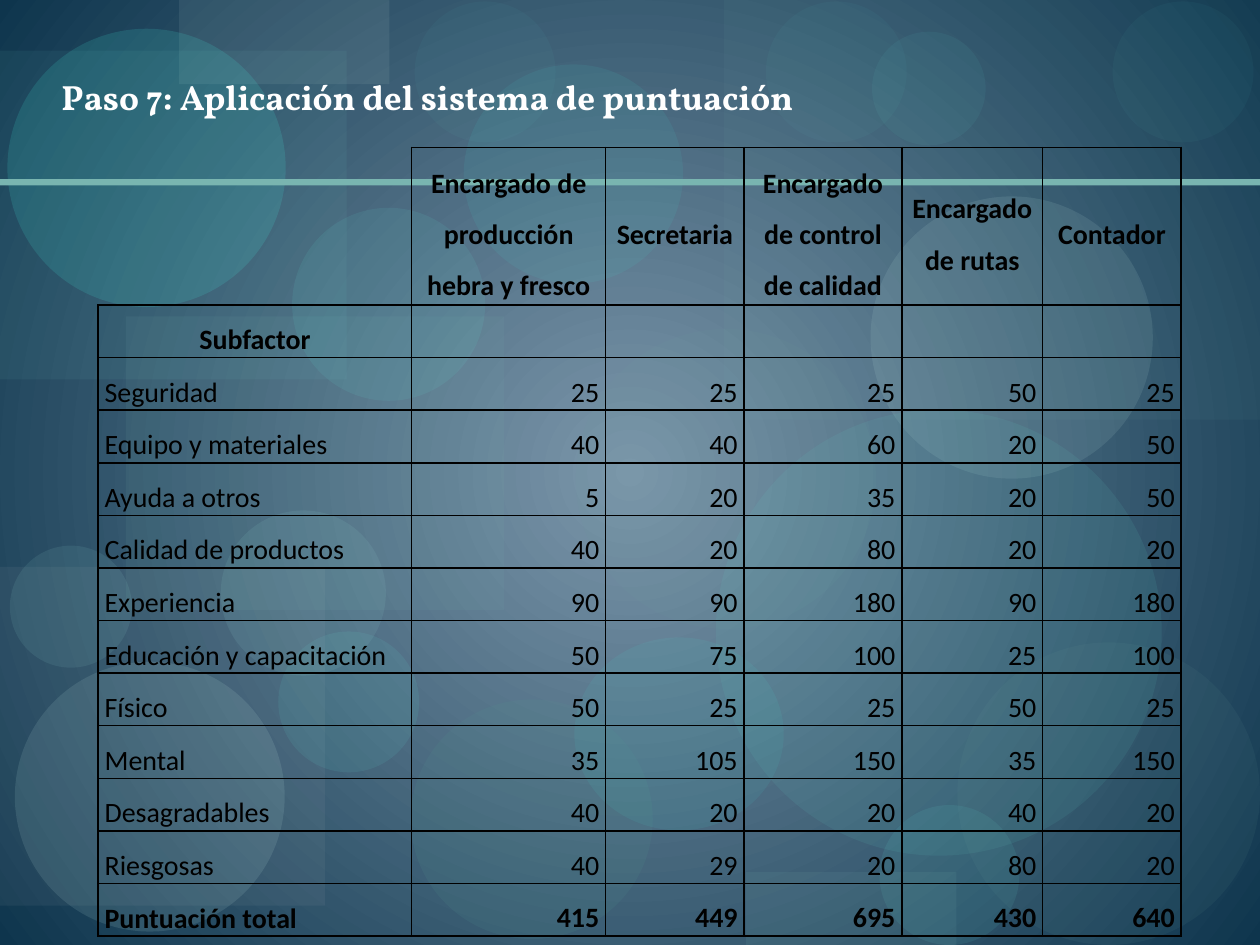
from lxml.etree import SubElement
from pptx import Presentation
from pptx.dml.color import RGBColor
from pptx.enum.shapes import MSO_SHAPE
from pptx.enum.text import MSO_ANCHOR, PP_ALIGN
from pptx.oxml.ns import qn
from pptx.util import Cm, Pt

HUES = {
    "core": "7B96AA", "edge": "0E354D", "bar": "79B5B0", "sea": "549791",
    "gray": "B2B7BA", "moss": "70A39E", "aqua": "65E8DC", "pale": "C1E8E4",
    "neon": "44EADC", "mint": "77D6CE", "mist": "BED7D4", "foam": "97DCD6",
    "teal": "61CDC4", "black": "000000", "white": "FFFFFF",
}
RECT, OVAL = MSO_SHAPE.RECTANGLE, MSO_SHAPE.OVAL

# kind, colour, opacity in percent, left, top, width, height (cm)
DECOR = [
    (RECT, "bar", 9, 2.54, 6.38, 7.62, 5.92),
    (OVAL, "sea", 13, 8.28, 14.1, 4.88, 4.83),
    (RECT, "bar", 6, 14.6, 0, 10.8, 8.46),
    (RECT, "gray", 8, 0, 11.43, 6.55, 6.83),
    (OVAL, "moss", 8, 11.61, 6.63, 6.05, 6.05),
    (OVAL, "aqua", 9, 17.73, 16.23, 2.82, 2.82),
    (OVAL, "pale", 11, 17.55, 3.96, 5.69, 5.69),
    (OVAL, "pale", 12, 0.3, 13.34, 5.44, 5.44),
    (OVAL, "aqua", 9, 5.61, 12.73, 2.84, 2.84),
    (OVAL, "neon", 8, 11.58, 12.85, 4.22, 3.89),
    (RECT, "mint", 7, 0, 1.02, 6.99, 6.63),
    (RECT, "mist", 10, 3.61, 0, 4.24, 1.7),
    (OVAL, "neon", 15, 0.15, 0.58, 5.61, 5.61),
    (OVAL, "foam", 10, 0.2, 11, 2.46, 2.46),
    (OVAL, "aqua", 9, 5.89, 4.19, 3.89, 3.89),
    (OVAL, "neon", 8, 9.35, 1.3, 4.42, 4.42),
    (OVAL, "teal", 10, 14.43, 8.26, 8.99, 8.99),
    (OVAL, "aqua", 4, 15.44, 0.03, 2.84, 2.84),
    (OVAL, "moss", 8, 19.3, 12.95, 6.1, 6.1),
    (OVAL, "foam", 10, 4.45, 10.29, 3.33, 3.33),
    (OVAL, "aqua", 6, 17.58, 0.64, 2.29, 2.29),
    (OVAL, "aqua", 4, 22.43, 0.03, 2.84, 2.84),
    (RECT, "bar", 10, 15.04, 17.58, 4.24, 1.47),
    (OVAL, "aqua", 4, 8.36, 0.03, 2.84, 2.84),
    (RECT, "bar", 100, 0, 3.61, 25.4, 0.13),
]

ROWS = [
    ("", "Encargado de producción hebra y fresco", "Secretaria",
     "Encargado de control de calidad", "Encargado de rutas", "Contador"),
    ("Subfactor", "", "", "", "", ""),
    ("Seguridad", 25, 25, 25, 50, 25),
    ("Equipo y materiales", 40, 40, 60, 20, 50),
    ("Ayuda a otros", 5, 20, 35, 20, 50),
    ("Calidad de productos", 40, 20, 80, 20, 20),
    ("Experiencia", 90, 90, 180, 90, 180),
    ("Educación y capacitación", 50, 75, 100, 25, 100),
    ("Físico", 50, 25, 25, 50, 25),
    ("Mental", 35, 105, 150, 35, 150),
    ("Desagradables", 40, 20, 20, 40, 20),
    ("Riesgosas", 40, 29, 20, 80, 20),
    ("Puntuación total", 415, 449, 695, 430, 640),
]
WIDTHS = [6.32, 3.91, 2.79, 3.18, 2.84, 2.79]
HEIGHTS = [3.18] + [1.06] * (len(ROWS) - 1)


def rgb(hue):
    return RGBColor.from_string(HUES[hue])


class Deck:
    """Holds the style and the current slide."""
    head, body = "Vollkorn", "Calibri"

    def __init__(self):
        self.prs = Presentation()
        self.prs.slide_width, self.prs.slide_height = Cm(25.4), Cm(19.05)
        self.slide = self.prs.slides.add_slide(self.prs.slide_layouts[6])

    def back(self, core, edge):
        fill = self.slide.background.fill
        fill.gradient()
        for stop, hue in zip(fill.gradient_stops, (core, edge)):
            stop.color.rgb = rgb(hue)
        grad = self.slide.element.find(".//" + qn("a:gradFill"))
        grad.remove(grad.find(qn("a:lin")))
        ring = SubElement(grad, qn("a:path"), path="circle")
        SubElement(ring, qn("a:fillToRect"), l="50000", t="50000", r="50000", b="50000")

    def shape(self, kind, hue, alpha, *box):
        item = self.slide.shapes.add_shape(kind, *map(Cm, box))
        item.shadow.inherit = False
        item.line.fill.background()
        item.fill.solid()
        item.fill.fore_color.rgb = rgb(hue)
        if alpha < 100:
            tint = item.element.spPr.find(".//" + qn("a:srgbClr"))
            SubElement(tint, qn("a:alpha"), val=str(alpha * 1000))

    def run(self, para, text, font, size, hue, bold):
        run = para.add_run()
        run.text = text
        run.font.name, run.font.size, run.font.bold = font, Pt(size), bold
        run.font.color.rgb = rgb(hue)

    def title(self, text, *box):
        frame = self.slide.shapes.add_textbox(*map(Cm, box)).text_frame
        frame.word_wrap = True
        para = frame.paragraphs[0]
        para.space_before = Pt(7)
        self.run(para, text, self.head, 20, "white", True)

    def border(self, cell, sides):
        props = cell._tc.get_or_add_tcPr()
        for spot, side in enumerate("LRTB"):
            line = SubElement(props, qn("a:ln" + side), w=str(Pt(1)))
            if side in sides:
                fill = SubElement(line, qn("a:solidFill"))
                SubElement(fill, qn("a:srgbClr"), val=HUES["black"])
            else:
                SubElement(line, qn("a:noFill"))
            props.insert(spot, line)

    def cell(self, cell, text, align, bold, anchor):
        cell.fill.background()
        cell.margin_left = cell.margin_right = Cm(0.13)
        cell.margin_top = cell.margin_bottom = 0
        cell.vertical_anchor = anchor
        para = cell.text_frame.paragraphs[0]
        if text:
            para.alignment, para.line_spacing = align, 1.5
            self.run(para, text, self.body, 16, "black", bold)

    def table(self, rows, widths, heights, left, top):
        grid = self.slide.shapes.add_table(
            len(rows), len(widths), Cm(left), Cm(top),
            Cm(sum(widths)), Cm(sum(heights))).table
        grid.first_row = grid.horz_banding = False
        for col, width in zip(grid.columns, widths):
            col.width = Cm(width)
        last = len(rows) - 1
        for i, row in enumerate(rows):
            grid.rows[i].height = Cm(heights[i])
            for j, value in enumerate(row):
                if i < 2:
                    align = PP_ALIGN.CENTER
                else:
                    align = PP_ALIGN.RIGHT if j else PP_ALIGN.LEFT
                low = i == last and j == 0
                anchor = MSO_ANCHOR.BOTTOM if low else MSO_ANCHOR.MIDDLE
                cell = grid.cell(i, j)
                self.cell(cell, str(value), align, i < 2 or i == last, anchor)
                # The corner cell is open at the left and top
                self.border(cell, "LRTB" if i or j else "RB")


def main():
    deck = Deck()
    # Backdrop
    deck.back("core", "edge")
    for item in DECOR:
        deck.shape(*item)
    # Heading
    deck.title("Paso 7: Aplicación del sistema de puntuación", 0.99, 1.4, 22.86, 15.24)
    # Scores
    deck.table(ROWS, WIDTHS, HEIGHTS, 1.98, 2.97)
    deck.prs.save("out.pptx")


if __name__ == "__main__":
    main()
